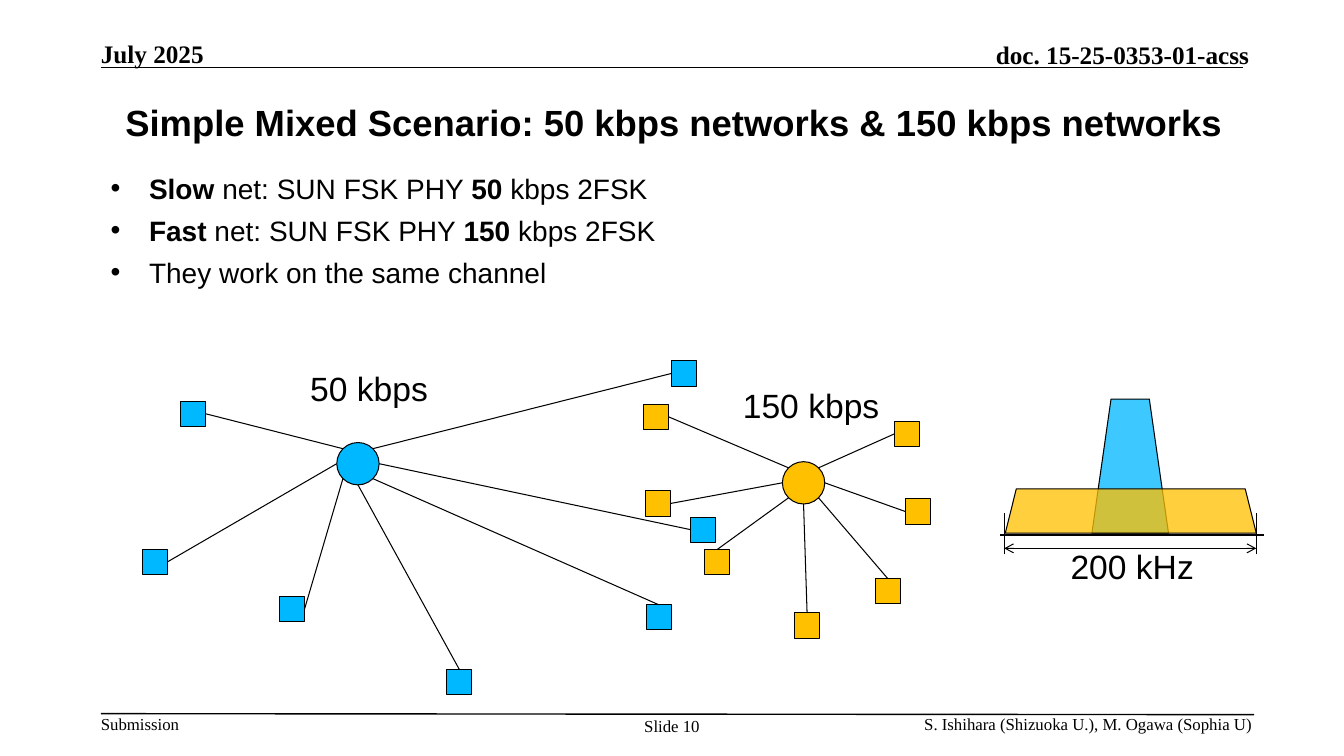
from math import cos, radians, sin

from lxml.etree import SubElement
from pptx import Presentation
from pptx.dml.color import RGBColor
from pptx.enum.shapes import MSO_CONNECTOR, MSO_SHAPE
from pptx.enum.text import MSO_ANCHOR, MSO_AUTO_SIZE, PP_ALIGN
from pptx.oxml.ns import qn
from pptx.util import Inches, Pt

BLACK = RGBColor(0x00, 0x00, 0x00)
BLUE = RGBColor(0x00, 0xB8, 0xFF)
AMBER = RGBColor(0xFF, 0xC0, 0x00)
SERIF, SANS = "Times New Roman", "Arial"
LEFT, CENTER, RIGHT = PP_ALIGN.LEFT, PP_ALIGN.CENTER, PP_ALIGN.RIGHT
TOP_SIDE, LEFT_SIDE, RIGHT_SIDE = 0, 1, 3
HUB, NODE = 0.42, 0.25

TITLE = "Simple Mixed Scenario: 50 kbps networks & 150 kbps networks"
# Each bullet is a list of (text, bold) runs
BULLETS = [
    [("Slow", True), (" net: SUN FSK PHY ", False), ("50", True), (" kbps 2FSK", False)],
    [("Fast", True), (" net: SUN FSK PHY ", False), ("150", True), (" kbps 2FSK", False)],
    [("They work on the same channel", False)],
]
# text, box, size, bold, alignment
PAGE_TEXTS = [
    ("July 2025", (1, 0.38, 1.75, 0.3), 18, True, LEFT),
    ("doc. 15-25-0353-01-acss", (7.29, 0.39, 5.1, 0.3), 18, True, RIGHT),
    ("Submission", (1, 7.08, 0.79, 0.2), 12, False, LEFT),
    ("Slide 10", (6.28, 7.1, 0.77, 0.4), 12, False, CENTER),
    ("S. Ishihara (Shizuoka U.), M. Ogawa (Sophia U)", (9.13, 7.08, 3.29, 0.2), 12, False, RIGHT),
]
LABELS = [
    ("50 kbps", (2.97, 3.6, 1.38, 0.5)),
    ("150 kbps", (7.26, 3.77, 1.57, 0.5)),
    ("200 kHz", (10.51, 5.37, 1.44, 0.5)),
]
# Nodes: left, top, side joined, clockwise angle on the hub (0 is right)
NETWORKS = [
    (BLUE, (3.34, 4.39), [
        (1.41, 5.45, RIGHT_SIDE, 180), (2.77, 5.92, RIGHT_SIDE, 135),
        (4.43, 6.64, TOP_SIDE, 90), (6.85, 5.13, LEFT_SIDE, 0),
        (6.66, 3.58, LEFT_SIDE, 315), (6.41, 6, TOP_SIDE, 45),
        (1.79, 3.98, RIGHT_SIDE, 225)]),
    (AMBER, (7.76, 4.58), [
        (6.38, 4.01, RIGHT_SIDE, 225), (6.4, 4.87, RIGHT_SIDE, 180),
        (6.99, 5.45, TOP_SIDE, 135), (7.88, 6.08, TOP_SIDE, 90),
        (8.68, 5.74, TOP_SIDE, 45), (8.98, 4.95, LEFT_SIDE, 0),
        (8.87, 4.18, LEFT_SIDE, 315)]),
]
SPECTRA = [(BLUE, (10.83, 3.96, 0.76, 1.33)), (AMBER, (9.97, 4.85, 2.49, 0.44))]
BAND_LEFT, BAND_RIGHT = 9.96, 12.46

prs = Presentation()
prs.slide_width, prs.slide_height = Inches(13.33), Inches(7.5)
s = prs.slides.add_slide(prs.slide_layouts[5])


def add_run(p, text, size=12, font=SERIF, bold=False):
    r = p.add_run()
    r.text = text
    r.font.size, r.font.name, r.font.bold = Pt(size), font, bold
    r.font.color.rgb = BLACK


def add_text(text, box, align=LEFT, wrap=True, margins=(0, 0), **run_format):
    tf = s.shapes.add_textbox(*map(Inches, box)).text_frame
    tf.word_wrap = wrap
    tf.margin_left = tf.margin_right = Inches(margins[0])
    tf.margin_top = tf.margin_bottom = Inches(margins[1])
    tf.paragraphs[0].alignment = align
    add_run(tf.paragraphs[0], text, **run_format)


def add_line(x1, y1, x2, y2, width=0.75, arrows=False):
    line = s.shapes.add_connector(MSO_CONNECTOR.STRAIGHT, *map(Inches, (x1, y1, x2, y2)))
    line.line.color.rgb, line.line.width = BLACK, Pt(width)
    if arrows:
        ln = line.line._get_or_add_ln()
        for end in ("a:headEnd", "a:tailEnd"):
            SubElement(ln, qn(end), type="arrow")
    SubElement(line._element.spPr, qn("a:effectLst"))
    return line


def add_shape(kind, box, color, alpha=None):
    sp = s.shapes.add_shape(kind, *map(Inches, box))
    sp.shadow.inherit = False
    sp.fill.solid()
    sp.fill.fore_color.rgb = color
    sp.line.color.rgb, sp.line.width = BLACK, Pt(0.75)
    if alpha:
        clr = sp._element.spPr.find(qn("a:solidFill"))[0]
        SubElement(clr, qn("a:alpha"), val=str(alpha * 1000))
    return sp


def add_title():
    title = s.shapes.title
    title.left, title.top, title.width, title.height = map(Inches, (0.92, 0.71, 11.54, 1))
    tf = title.text_frame
    tf.auto_size, tf.vertical_anchor = MSO_AUTO_SIZE.NONE, MSO_ANCHOR.MIDDLE
    tf.paragraphs[0].alignment = CENTER
    add_run(tf.paragraphs[0], TITLE, size=26, font=SANS, bold=True)


def add_bullets():
    tf = s.shapes.add_textbox(*map(Inches, (1, 1.65, 11.33, 1.25))).text_frame
    tf.word_wrap = True
    for i, runs in enumerate(BULLETS):
        p = tf.add_paragraph() if i else tf.paragraphs[0]
        p.space_before = Pt(6)
        pPr = p._p.get_or_add_pPr()
        pPr.set("marL", str(Inches(0.38)))
        pPr.set("indent", str(-Inches(0.38)))
        SubElement(pPr, qn("a:buFont"), typeface=SANS)
        SubElement(pPr, qn("a:buChar"), char="•")
        for text, bold in runs:
            add_run(p, text, size=20, font=SANS, bold=bold)


def add_network(color, hub, nodes):
    add_shape(MSO_SHAPE.OVAL, (*hub, HUB, HUB), color)
    radius = HUB / 2
    cx, cy = hub[0] + radius, hub[1] + radius
    for x, y, side, angle in nodes:
        node = add_shape(MSO_SHAPE.RECTANGLE, (x, y, NODE, NODE), color)
        a = radians(angle)
        link = add_line(cx + radius * cos(a), cy + radius * sin(a), x, y)
        link.end_connect(node, side)


add_title()
add_line(1, 0.67, 12.33, 0.67, width=1)
add_line(1, 7.08, 12.44, 7.09, width=1)
for text, box, size, bold, align in PAGE_TEXTS:
    add_text(text, box, align, wrap=size > 12, size=size, bold=bold)
add_bullets()
for color, box in SPECTRA:
    add_shape(MSO_SHAPE.TRAPEZOID, box, color, alpha=76)
for network in NETWORKS:
    add_network(*network)
for text, box in LABELS:
    add_text(text, box, CENTER, wrap=False, margins=(0.1, 0.05), size=24, font=SANS)
add_line(9.92, 5.31, 12.54, 5.31, width=1.25)
for x in (BAND_LEFT, BAND_RIGHT):
    add_line(x, 5.5, x, 5.09)
add_line(BAND_LEFT, 5.44, BAND_RIGHT, 5.44, arrows=True)

prs.save("out.pptx")
